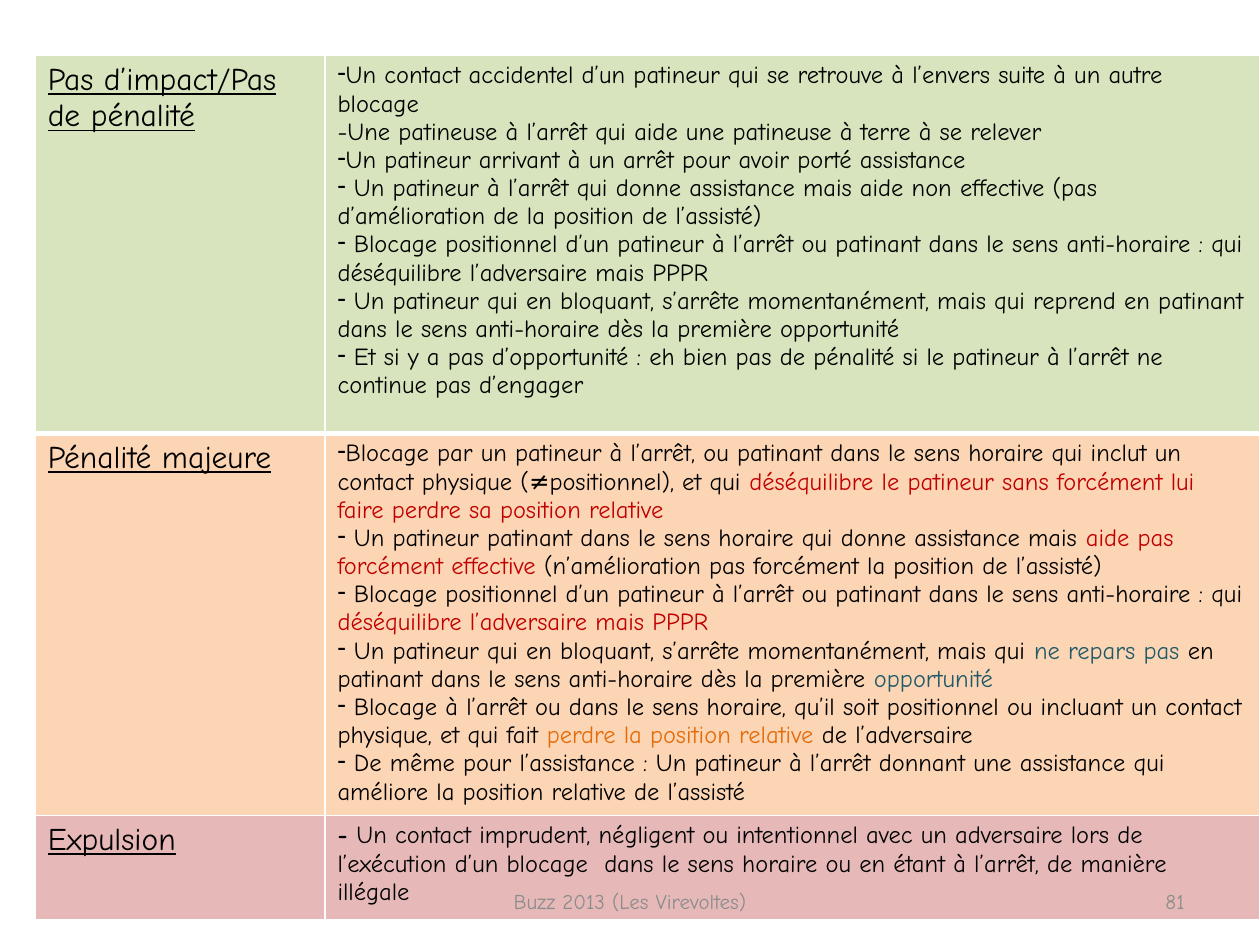
import pptx
import pptx.dml.color
import pptx.enum.text
import pptx.oxml
import pptx.oxml.ns
import pptx.util
from pptx.util import Cm

BLACK, RED, TEAL, ORANGE, GREY = "000000", "C00000", "215968", "E46C0A", "8C8C8C"


def color(value):
    return pptx.dml.color.RGBColor.from_string(value)


def add_text(para, text, size=14, ink=BLACK, underline=False, bold=False):
    span = para.add_run()
    span.text = text
    span.font.name = "Comic Neue"
    span.font.size = pptx.util.Pt(size)
    span.font.color.rgb = color(ink)
    span.font.underline = underline
    span.font.bold = bold


penalties = [
    ("Pas d’impact/Pas de pénalité", "D7E4BD", Cm(7.62), [
        [("Un contact accidentel d’un patineur qui se retrouve à l’envers suite à un autre blocage", BLACK)],
        [("-Une patineuse à l’arrêt qui aide une patineuse à terre à se relever", BLACK)],
        [("Un patineur arrivant à un arrêt pour avoir porté assistance", BLACK)],
        [(" Un patineur à l’arrêt qui donne assistance mais aide non effective "
          "(pas d’amélioration de la position de l’assisté)", BLACK)],
        [(" Blocage positionnel d’un patineur à l’arrêt ou patinant dans le sens anti-horaire : "
          "qui déséquilibre l’adversaire mais PPPR", BLACK)],
        [(" Un patineur qui en bloquant, s’arrête momentanément, mais qui reprend en patinant "
          "dans le sens anti-horaire dès la première opportunité", BLACK)],
        [(" Et si y a pas d’opportunité : eh bien pas de pénalité si le patineur à l’arrêt "
          "ne continue pas d’engager", BLACK)],
    ]),
    ("Pénalité majeure", "FCD5B5", Cm(7.7), [
        [("Blocage par un patineur à l’arrêt, ou patinant dans le sens horaire qui inclut "
          "un contact physique (≠positionnel), et qui ", BLACK),
         ("déséquilibre le patineur sans forcément lui faire perdre sa position relative", RED)],
        [(" Un patineur patinant dans le sens horaire qui donne assistance mais ", BLACK),
         ("aide pas forcément effective ", RED),
         ("(n’amélioration pas forcément la position de l’assisté)", BLACK)],
        [(" Blocage positionnel d’un patineur à l’arrêt ou patinant dans le sens anti-horaire : qui ", BLACK),
         ("déséquilibre l’adversaire mais PPPR", RED)],
        [(" Un patineur qui en bloquant, s’arrête momentanément, mais qui ", BLACK),
         ("ne repars pas", TEAL),
         (" en patinant dans le sens anti-horaire dès la première ", BLACK),
         ("opportunité", TEAL)],
        [(" Blocage à l’arrêt ou dans le sens horaire, qu’il soit positionnel ou incluant "
          "un contact physique, et qui fait ", BLACK),
         ("perdre la position relative ", ORANGE),
         ("de l’adversaire", BLACK)],
        [(" De même pour l’assistance : Un patineur à l’arrêt donnant une assistance "
          "qui améliore la position relative de l’assisté", BLACK)],
    ]),
    ("Expulsion", "E6B9B8", Cm(2.11), [
        [("- ", BLACK),
         ("Un contact imprudent, négligent ou intentionnel avec un adversaire lors de l’exécution "
          "d’un blocage  dans le sens horaire ou en étant à l’arrêt, de manière illégale", BLACK)],
    ]),
]

deck = pptx.Presentation()
deck.slide_width, deck.slide_height = Cm(25.4), Cm(19.05)
page = deck.slides.add_slide(deck.slide_layouts[6])

table = page.shapes.add_table(len(penalties), 2, Cm(0.71), Cm(1.12), Cm(24.69), Cm(17.43)).table
table.first_row = False
table.horz_banding = False
table.columns[0].width, table.columns[1].width = Cm(5.84), Cm(18.85)

for index, (heading, fill, height, rules) in enumerate(penalties):
    table.rows[index].height = height
    heading_cell, rules_cell = table.rows[index].cells
    add_text(heading_cell.text_frame.paragraphs[0], heading, size=18, underline=True)

    frame = rules_cell.text_frame
    for number, spans in enumerate(rules):
        para = frame.add_paragraph() if number else frame.paragraphs[0]
        if not spans[0][0].startswith("-"):
            properties = para._p.get_or_add_pPr()
            properties.set("marL", "0")
            properties.set("indent", "0")
            properties.append(pptx.oxml.parse_xml(
                f'<a:buChar {pptx.oxml.ns.nsdecls("a")} char="-"/>'))
        for text, ink in spans:
            add_text(para, text, ink=ink, bold=text == "- ")

    for cell in (heading_cell, rules_cell):
        for side in ("lnL", "lnR", "lnT", "lnB"):
            points = 3 if index == 0 and side == "lnB" else 1
            cell._tc.get_or_add_tcPr().append(pptx.oxml.parse_xml(
                f'<a:{side} {pptx.oxml.ns.nsdecls("a")} w="{pptx.util.Pt(points)}">'
                f'<a:solidFill><a:srgbClr val="FFFFFF"/></a:solidFill></a:{side}>'))
        cell.fill.solid()
        cell.fill.fore_color.rgb = color(fill)

align = pptx.enum.text.PP_ALIGN
for text, left, width, alignment in [
    ("Buzz 2013 (Les Virevoltes)", Cm(8.68), Cm(8.04), align.CENTER),
    ("81", Cm(18.2), Cm(5.93), align.RIGHT),
]:
    box = page.shapes.add_textbox(left, Cm(17.66), width, Cm(1.01))
    box.text_frame.word_wrap = True
    box.text_frame.vertical_anchor = pptx.enum.text.MSO_ANCHOR.MIDDLE
    para = box.text_frame.paragraphs[0]
    para.alignment = alignment
    add_text(para, text, size=12, ink=GREY)

deck.save("out.pptx")
